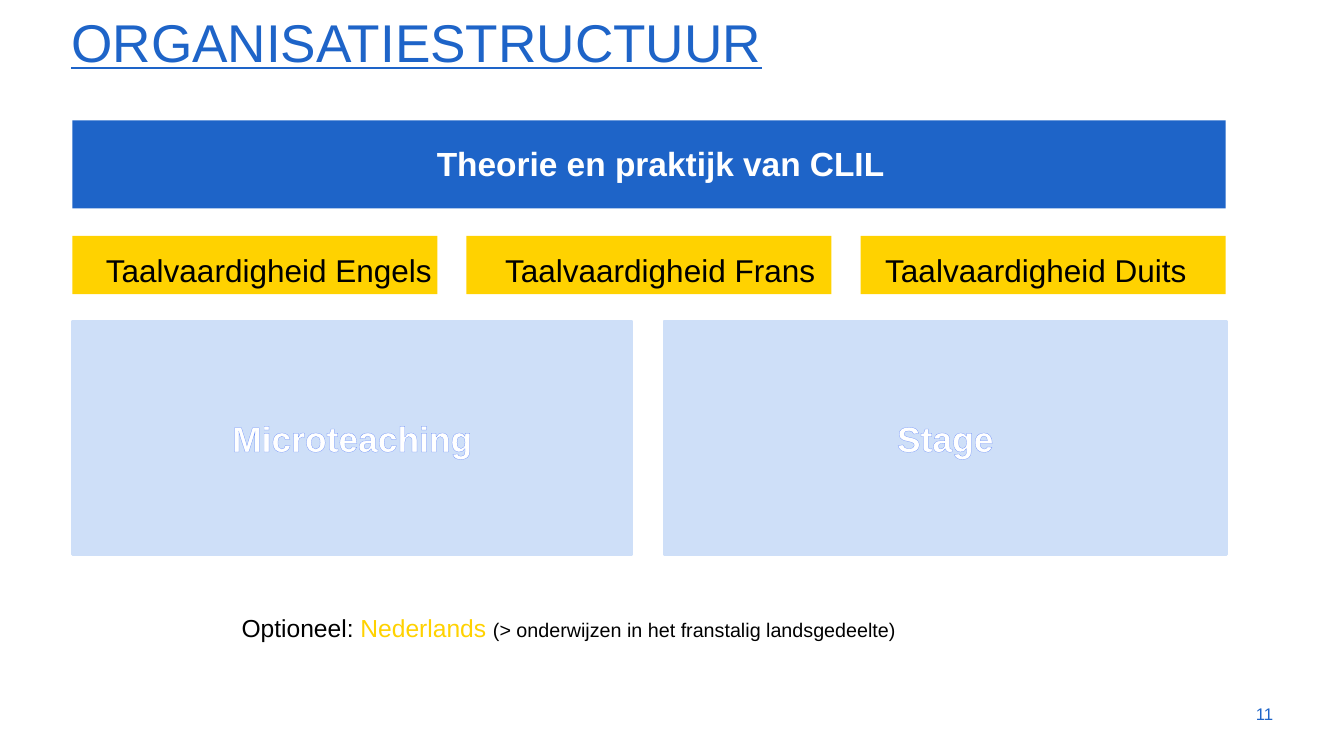
from lxml import etree
from pptx import Presentation
from pptx.dml.color import RGBColor
from pptx.enum.shapes import MSO_SHAPE
from pptx.enum.text import MSO_ANCHOR, MSO_AUTO_SIZE, PP_ALIGN
from pptx.oxml.ns import qn
from pptx.util import Inches, Pt

RECT = MSO_SHAPE.RECTANGLE
TOP, MIDDLE, BOTTOM = MSO_ANCHOR.TOP, MSO_ANCHOR.MIDDLE, MSO_ANCHOR.BOTTOM
LEFT, CENTER, RIGHT = PP_ALIGN.LEFT, PP_ALIGN.CENTER, PP_ALIGN.RIGHT
FIT = MSO_AUTO_SIZE.SHAPE_TO_FIT_TEXT

BLUE = RGBColor(0x1E, 0x64, 0xC8)
YELLOW = RGBColor(0xFF, 0xD2, 0x00)
PALE = RGBColor(0xCE, 0xDF, 0xF8)
EDGE = RGBColor(0x6B, 0x8E, 0xF9)
WHITE = RGBColor(0xFF, 0xFF, 0xFF)
BLACK = RGBColor(0x00, 0x00, 0x00)

MARGIN = 1.02
WIDTH = 16.27


def add_run(para, text, size, color, **extra):
    """Append a run of Arial text to a paragraph."""
    run = para.add_run()
    run.text = text
    style = {"name": "Arial", "size": Pt(size), **extra}
    for key, value in style.items():
        setattr(run.font, key, value)
    run.font.color.rgb = color
    return run


def outline(run, color, width):
    """Draw a line around the letters of a run."""
    line = etree.Element(qn("a:ln"), w=str(Pt(width)))
    fill = etree.SubElement(line, qn("a:solidFill"))
    etree.SubElement(fill, qn("a:srgbClr"), val=str(color))
    run.font._element.insert(0, line)


def add_box(slide, area, color, border=False):
    """Add a filled rectangle."""
    box = slide.shapes.add_shape(RECT, *map(Inches, area))
    box.shadow.inherit = False
    box.fill.solid()
    box.fill.fore_color.rgb = color
    if border:
        box.line.color.rgb = color
        box.line.width = Pt(2.5)
    else:
        box.line.fill.background()
    return box


def add_panel(slide, area, text):
    """Add a pale panel with an outlined caption."""
    frame = add_box(slide, area, PALE, border=True).text_frame
    frame.vertical_anchor = MIDDLE
    para = frame.paragraphs[0]
    para.alignment = CENTER
    outline(add_run(para, text, 36, WHITE, bold=True), EDGE, 2.48)


def add_text(slide, area, runs, align=LEFT, anchor=TOP, space=1.0,
             indent=0, wrap=True):
    """Add a text box; each run is (text, size, color, extra format)."""
    frame = slide.shapes.add_textbox(*map(Inches, area)).text_frame
    frame.word_wrap = wrap
    frame.vertical_anchor = anchor
    if not wrap:
        frame.auto_size = FIT
    para = frame.paragraphs[0]
    para.alignment = align
    para.line_spacing = space
    if indent:
        props = para._p.get_or_add_pPr()
        props.set("marL", str(Inches(indent)))
        props.set("indent", "0")
    for text, size, color, extra in runs:
        add_run(para, text, size, color, **extra)


def main():
    prs = Presentation()
    prs.slide_width, prs.slide_height = Inches(18.96), Inches(10.67)
    slide = prs.slides.add_slide(prs.slide_layouts[6])

    # Title
    add_text(slide, (0.91, 0.15, 17.18, 0.94),
             [("ORGANISATIESTRUCTUUR", 54, BLUE, {"underline": True})],
             anchor=BOTTOM, space=0.9)

    # Theory bar
    add_box(slide, (MARGIN, 1.7, WIDTH, 1.24), BLUE)
    add_text(slide, (5.77, 1.92, 7.01, 1.04),
             [("Theorie en praktijk van CLIL", 34, WHITE, {"bold": True})],
             CENTER, space=1.1, indent=0.09)

    # Language skills
    wide = 5.15
    step = (WIDTH - wide) / 2
    skills = [("Engels", 1.19), ("Frans", 6.71), ("Duits", 12.01)]
    for i, (name, left) in enumerate(skills):
        add_box(slide, (MARGIN + i * step, 3.33, wide, 0.82), YELLOW)
        add_text(slide, (left, 3.39, 5.12, 1.04),
                 [(f"Taalvaardigheid {name}", 32, BLACK, {})],
                 CENTER, space=1.2, indent=0.09)

    # Practice panels
    panels = [("Microteaching", MARGIN, 7.9), ("Stage", 9.37, 7.93)]
    for name, left, width in panels:
        add_panel(slide, (left, 4.53, width, 3.3), name)

    # Optional course
    add_text(slide, (3.31, 8.52, 9.44, 0.59),
             [("Optioneel: ", 25, BLACK, {}),
              ("Nederlands ", 25, YELLOW, {}),
              ("(> onderwijzen in het franstalig landsgedeelte)",
               20, BLACK, {})],
             space=1.2, wrap=False)

    # Page number
    add_text(slide, (17.05, 9.79, 1.01, 0.57), [("11", 17.1, BLUE, {})],
             RIGHT, MIDDLE)

    prs.save("out.pptx")


if __name__ == "__main__":
    main()
